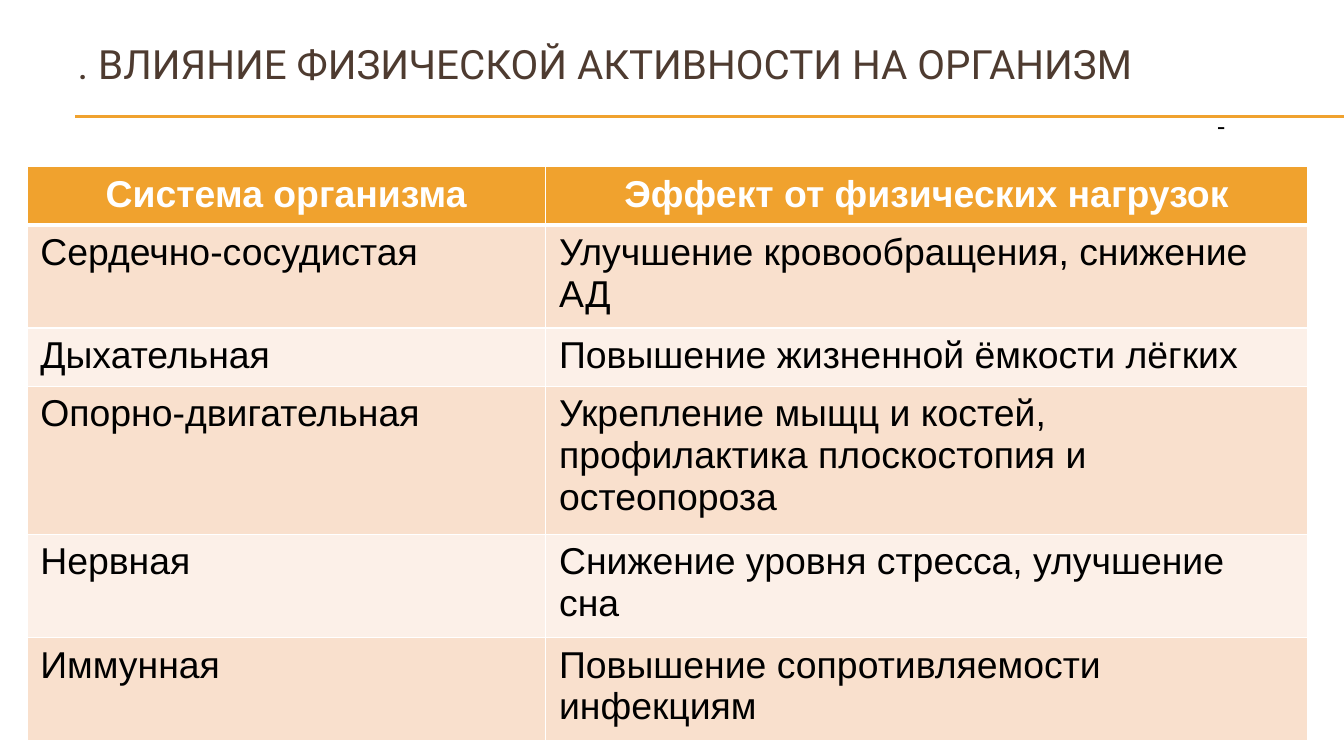
from dataclasses import dataclass

from lxml import etree
from pptx import Presentation
from pptx import util as u
from pptx.dml.color import RGBColor
from pptx.enum import shapes, text
from pptx.oxml.ns import qn


@dataclass(frozen=True)
class Theme:
    gold: str = "F0A22E"
    brown: str = "4E3B30"
    white: str = "FFFFFF"
    black: str = "000000"
    bands: tuple = ("F9E0CD", "FCF0E8")
    head: str = "Roboto"
    body: str = "Arial"
    title: float = 21.6
    cell: float = 20
    mark: float = 14


def write(frame, words, size, font, color, bold=False, align=text.PP_ALIGN.LEFT):
    """Put one formatted paragraph into a text frame."""
    para = frame.paragraphs[0]
    para.alignment = align
    run = para.add_run()
    run.text = words
    run.font.size = u.Pt(size)
    run.font.name = font
    run.font.bold = bold
    run.font.color.rgb = RGBColor.from_string(color)


class Deck:
    def __init__(self, theme):
        self.theme = theme
        self.pres = Presentation()
        # Wide 16:9 page
        self.pres.slide_width = u.Inches(10)
        self.pres.slide_height = u.Inches(10 * 9 / 16)
        self.slide = self.pres.slides.add_slide(self.pres.slide_layouts[6])

    def rule(self, left, right, top):
        line = self.slide.shapes.add_connector(
            shapes.MSO_CONNECTOR.STRAIGHT,
            u.Inches(left), u.Inches(top), u.Inches(right), u.Inches(top))
        line.line.color.rgb = RGBColor.from_string(self.theme.gold)
        line.line.width = u.Pt(0.75)
        etree.SubElement(line._element.spPr, qn("a:effectLst"))

    def label(self, words, box, anchor=text.MSO_ANCHOR.TOP, inset=0.1, **style):
        frame = self.slide.shapes.add_textbox(*map(u.Inches, box)).text_frame
        frame.word_wrap = True
        frame.vertical_anchor = anchor
        frame.margin_left = u.Inches(inset)
        write(frame, words, **style)

    def edge(self, cell, side, width):
        line = etree.SubElement(cell._tc.get_or_add_tcPr(), qn("a:ln" + side),
                                w=str(u.Pt(width)))
        fill = etree.SubElement(line, qn("a:solidFill"))
        etree.SubElement(fill, qn("a:srgbClr"), val=self.theme.white)

    def table(self, rows, left, top, widths, high, tall):
        look = self.theme
        frame = self.slide.shapes.add_table(
            len(rows), len(widths), u.Inches(left), u.Inches(top),
            u.Inches(sum(widths)), u.Inches(tall))
        grid = frame.table
        for col, width in zip(grid.columns, widths):
            col.width = u.Inches(width)
        for i, row in enumerate(rows):
            grid.rows[i].height = u.Inches(high)
            for j, words in enumerate(row):
                cell = grid.cell(i, j)
                # Borders go before the fill; the header has a thick base
                for side in "LRTB":
                    thick = (i, side) in ((0, "B"), (1, "T"))
                    self.edge(cell, side, 3 if thick else 1)
                top_row = i == 0
                shade = look.gold if top_row else look.bands[(i - 1) % 2]
                cell.fill.solid()
                cell.fill.fore_color.rgb = RGBColor.from_string(shade)
                write(cell.text_frame, words, size=look.cell, font=look.body,
                      color=look.white if top_row else look.black, bold=top_row,
                      align=text.PP_ALIGN.CENTER if top_row else text.PP_ALIGN.LEFT)
        # Row heights reset the frame, so its height comes last
        frame.height = u.Inches(tall)


ROWS = [
    ("Система организма", "Эффект от физических нагрузок"),
    ("Сердечно-сосудистая", "Улучшение кровообращения, снижение АД"),
    ("Дыхательная", "Повышение жизненной ёмкости лёгких"),
    ("Опорно-двигательная",
     "Укрепление мыщц и костей, профилактика плоскостопия и остеопороза"),
    ("Нервная", "Снижение уровня стресса, улучшение сна"),
    ("Иммунная", "Повышение сопротивляемости инфекциям"),
]


def main():
    look = Theme()
    deck = Deck(look)

    # Double rule under the heading
    for top in (0.86, 0.87):
        deck.rule(0.56, 10, top)

    # Heading
    deck.label(". ВЛИЯНИЕ ФИЗИЧЕСКОЙ АКТИВНОСТИ НА ОРГАНИЗМ",
               (0.48, 0.21, 9, 0.52), anchor=text.MSO_ANCHOR.MIDDLE,
               size=look.title, font=look.head, color=look.brown)

    # Body systems and effects
    deck.table(ROWS, 0.2, 1.24, (3.86, 5.67), high=0.41, tall=2.73)

    # Dash at the right
    deck.label("-", (8.86, 0.77, 1.14, 0.4), inset=0.2,
               size=look.mark, font=look.head, color=look.black)

    deck.pres.save("out.pptx")


if __name__ == "__main__":
    main()
